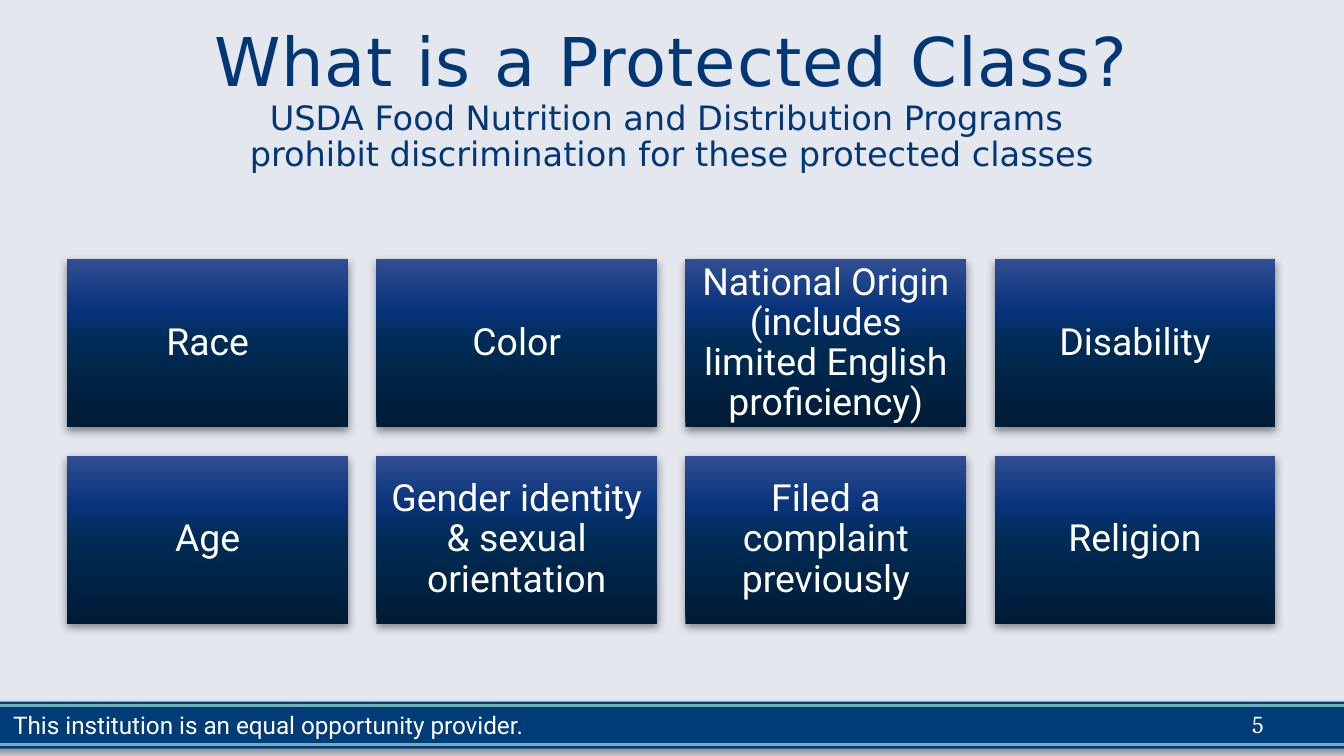
from copy import deepcopy

from lxml import etree
from pptx import Presentation, util as u
from pptx.dml.color import RGBColor
from pptx.enum import shapes, text
from pptx.oxml import ns, parse_xml

COLORS = {"bg": "E5E7EF", "banner": "003D78", "rule": "72AEB6",
          "title": "013775", "white": "FFFFFF", "shadow": "000000"}
CARD_STOPS = [(0, "001B35"), (50, "002B55"), (70, "08337A"), (100, "314E94")]
CLASSES = [
    ["Race", "Color", "National Origin (includes limited English proficiency)", "Disability"],
    ["Age", "Gender identity & sexual orientation", "Filed a complaint previously", "Religion"],
]


def rgb(name):
    return RGBColor.from_string(COLORS[name])


def add_text(p, value, size, font="Roboto", color="white", spacing=None,
             align=None, line_spacing=None):
    r = p.add_run()
    r.text = value
    r.font.size = u.Pt(size)
    r.font.name = font
    r.font.color.rgb = rgb(color)
    if spacing:
        r.font._element.set("spc", str(int(spacing * 100)))
    if align is not None:
        p.alignment = align
    if line_spacing:
        p.line_spacing = line_spacing
    return r


class Deck:
    def __init__(self, width, height):
        self.prs = Presentation()
        self.prs.slide_width = u.Inches(width)
        self.prs.slide_height = u.Inches(height)
        self.s = self.prs.slides.add_slide(self.prs.slide_layouts[5])
        self.s.background.fill.solid()
        self.s.background.fill.fore_color.rgb = rgb("bg")

    def title(self, box, lines):
        sp = self.s.shapes.title
        sp.left, sp.top, sp.width, sp.height = map(u.Inches, box)
        tf = sp.text_frame
        tf.word_wrap = True
        tf.auto_size = text.MSO_AUTO_SIZE.NONE
        tf.vertical_anchor = text.MSO_ANCHOR.MIDDLE
        tf.margin_bottom = u.Inches(0.1)
        p = tf.paragraphs[0]
        for i, (value, size, spacing) in enumerate(lines):
            if i:
                p.add_line_break()
                p._p[-1].append(deepcopy(r.font._element))
            r = add_text(p, value, size, "DejaVu Sans", "title", spacing,
                         text.PP_ALIGN.CENTER, 0.9)

    def shadow(self, sp, alpha, blur, dist, angle):
        effects = etree.SubElement(sp._element.spPr, ns.qn("a:effectLst"))
        shadow = etree.SubElement(effects, ns.qn("a:outerShdw"), blurRad=str(u.Pt(blur)),
                                  dist=str(u.Pt(dist)), dir=str(angle * 60000),
                                  algn="ctr", rotWithShape="0")
        color = etree.SubElement(shadow, ns.qn("a:srgbClr"), val=COLORS["shadow"])
        etree.SubElement(color, ns.qn("a:alpha"), val=str(alpha * 1000))

    def rect(self, box):
        sp = self.s.shapes.add_shape(shapes.MSO_SHAPE.RECTANGLE, *map(u.Inches, box))
        sp.line.fill.background()
        return sp

    def banner(self, box):
        sp = self.rect(box)
        sp.fill.solid()
        sp.fill.fore_color.rgb = rgb("banner")
        self.shadow(sp, 40, 4, 3, 45)

    def rule(self, x1, x2, y):
        line = self.s.shapes.add_connector(shapes.MSO_CONNECTOR.STRAIGHT,
                                           *map(u.Inches, (x1, y, x2, y)))
        line.line.color.rgb = rgb("rule")
        line.line.width = u.Pt(1.5)
        etree.SubElement(line._element.spPr, ns.qn("a:effectLst"))

    def label(self, box, value, **style):
        tf = self.s.shapes.add_textbox(*map(u.Inches, box)).text_frame
        tf.word_wrap = True
        tf.vertical_anchor = text.MSO_ANCHOR.MIDDLE
        add_text(tf.paragraphs[0], value, 13, **style)

    def card(self, box, value):
        sp = self.rect(box)
        stops = "".join(f'<a:gs pos="{pos * 1000}"><a:srgbClr val="{color}"/></a:gs>'
                        for pos, color in CARD_STOPS)
        sp._element.spPr.find(ns.qn("a:prstGeom")).addnext(parse_xml(
            f'<a:gradFill {ns.nsdecls("a")} rotWithShape="1"><a:gsLst>{stops}</a:gsLst>'
            '<a:lin ang="16200000" scaled="0"/></a:gradFill>'))
        self.shadow(sp, 43, 5, 2, 90)
        tf = sp.text_frame
        tf.word_wrap = True
        tf.vertical_anchor = text.MSO_ANCHOR.MIDDLE
        tf.margin_left = tf.margin_right = tf.margin_top = tf.margin_bottom = u.Inches(0.08)
        add_text(tf.paragraphs[0], value, 20, align=text.PP_ALIGN.CENTER, line_spacing=0.9)


def main():
    deck = Deck(10, 10 * 9 / 16)
    deck.banner((-0.1, 5.22, 10.2, 0.35))
    for y in (5.25, 5.54):
        deck.rule(-0.1, 10.1, y)
    deck.label((0, 5.23, 6.08, 0.32), "This institution is an equal opportunity provider.")
    deck.title((0.5, 0.15, 9, 1.26), [
        ("What is a Protected Class?", 36, 0.5),
        ("USDA Food Nutrition and Distribution Programs ", 18, None),
        ("prohibit discrimination for these protected classes", 18, None),
    ])
    deck.label((7.17, 5.25, 2.33, 0.3), "5", font="Cambria",
               align=text.PP_ALIGN.RIGHT, line_spacing=0.9)

    left, top, width, height, gap = 0.5, 1.93, 2.09, 1.25, 0.21
    pitch = 2.3
    for row, names in enumerate(CLASSES):
        for col, name in enumerate(names):
            deck.card((left + col * pitch, top + row * (height + gap), width, height), name)
    deck.prs.save("out.pptx")


if __name__ == "__main__":
    main()
